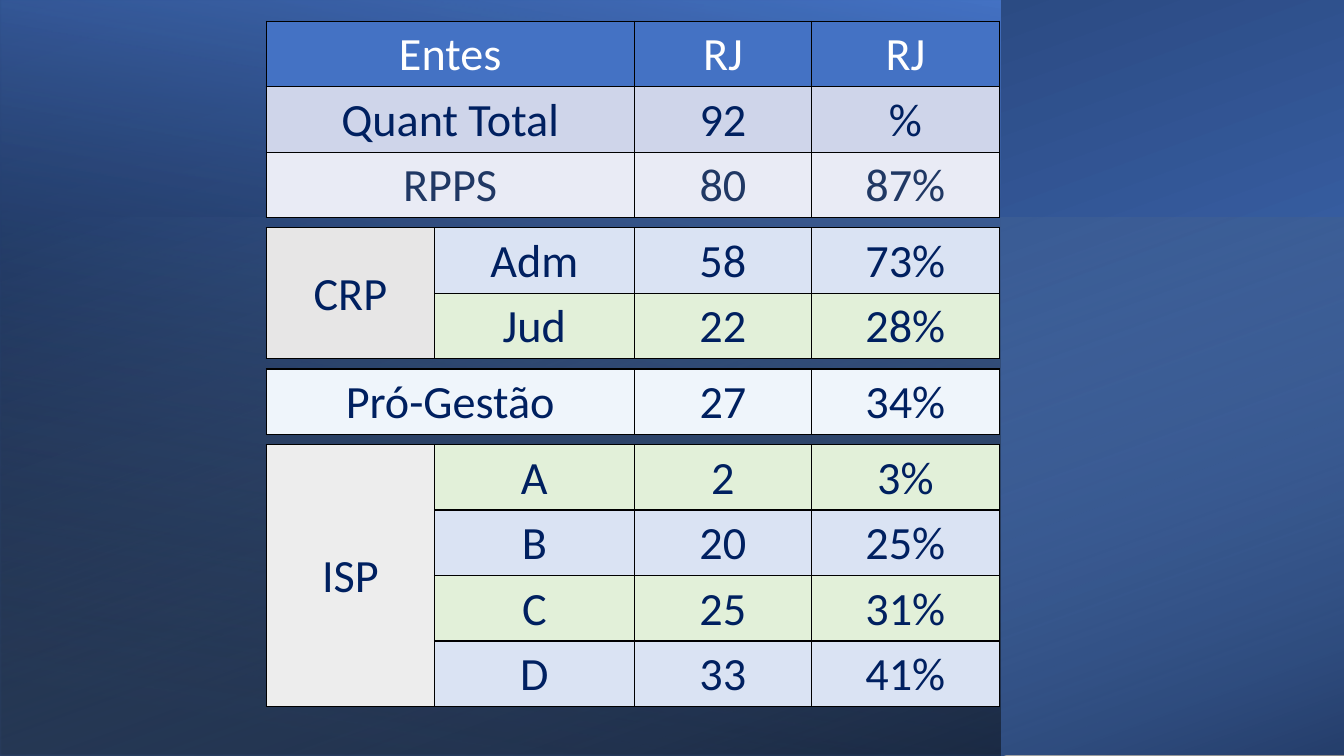
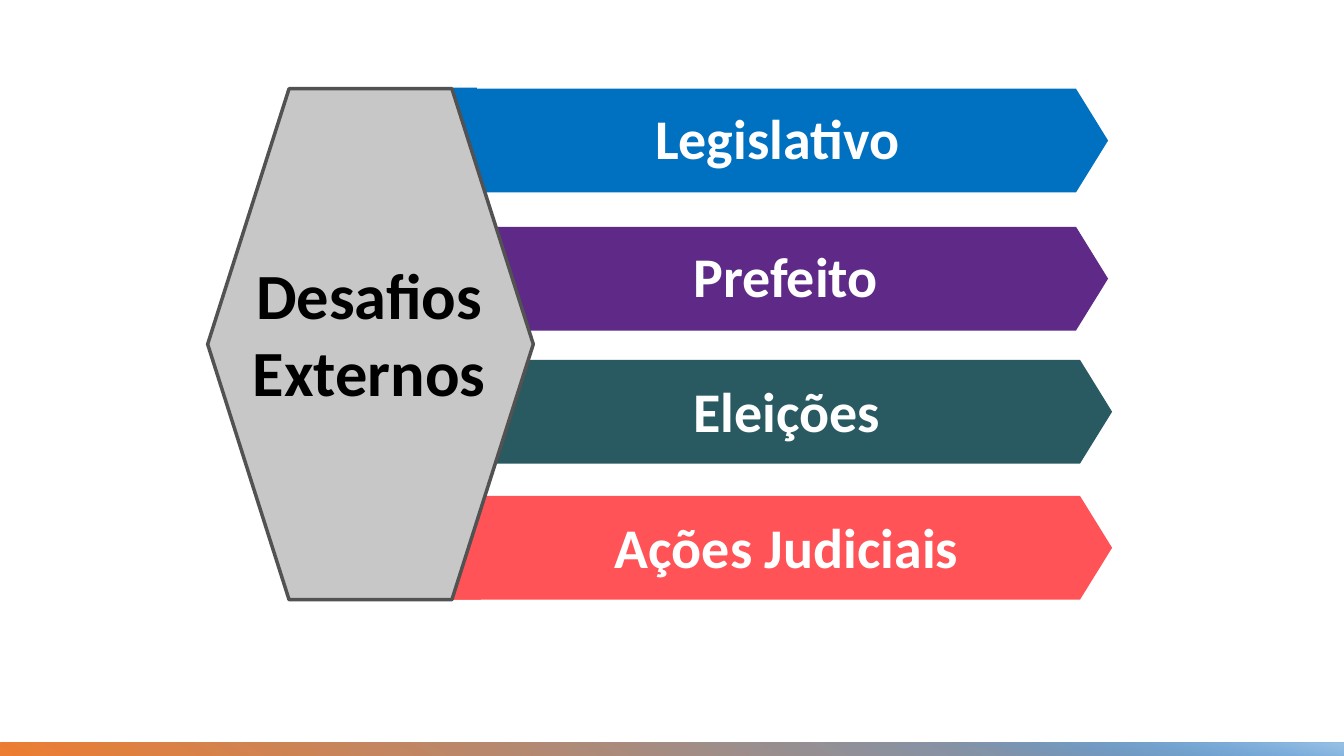
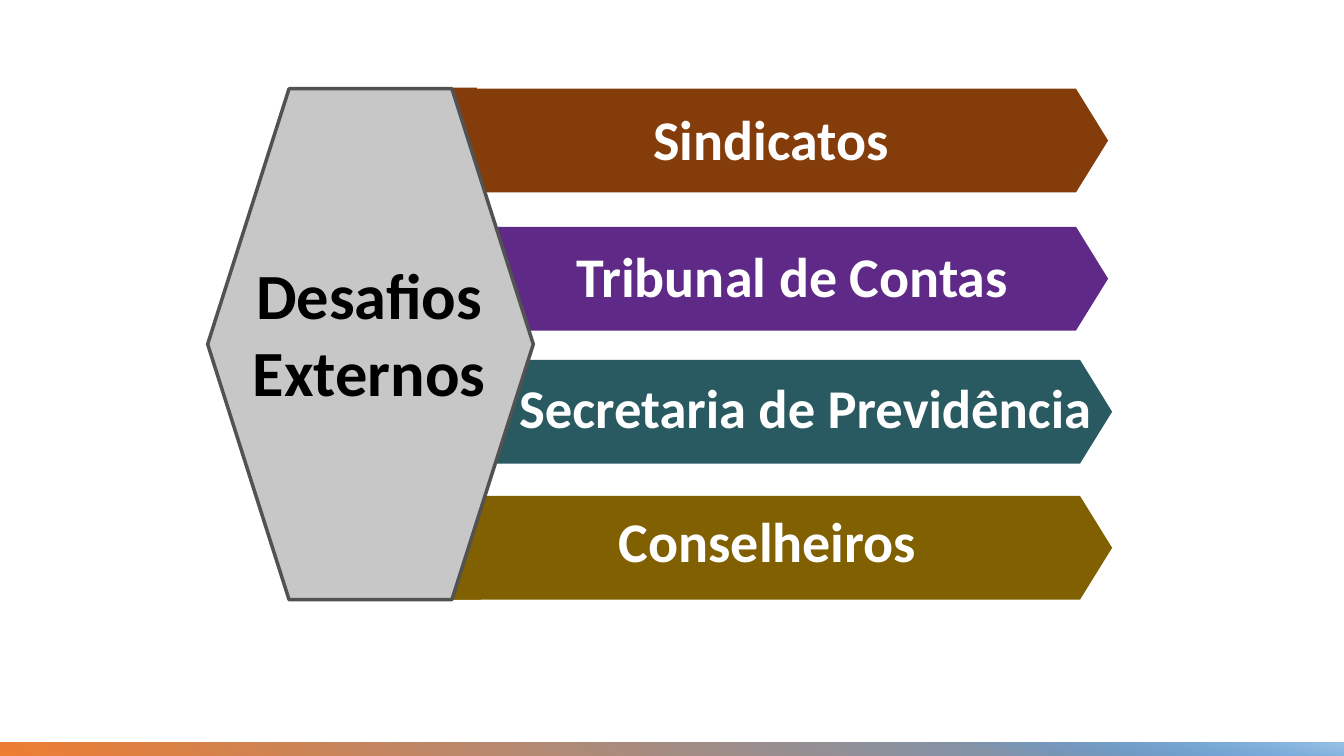
from lxml.etree import SubElement
from pptx import Presentation
from pptx.dml.color import RGBColor
from pptx.enum.shapes import MSO_SHAPE
from pptx.enum.text import MSO_ANCHOR, MSO_AUTO_SIZE, PP_ALIGN
from pptx.oxml.ns import qn
from pptx.util import Inches, Pt

FONT = "Calibri"
COLORS = {
    "white": "FFFFFF", "black": "000000", "blue": "4472C4", "navy": "203864",
    "ink": "002060", "sky": "9DC3E6", "total": "CFD5EA", "rpps": "E9EBF5",
    "crp": "E7E6E6", "isp": "EDEDED", "pale blue": "DAE3F3", "pale green": "E2F0D9",
    "ice": "EFF5FB", "orange": "ED7D31", "light blue": "5B9BD5", "cobalt": "0070C0",
    "purple": "5F2987", "teal": "295A61", "coral": "FF5357", "brown": "843C0B",
    "olive": "806000", "gray": "C7C7C7", "dark gray": "525252",
}

# Gradient rectangles: box, rotation, flipped, angle, stops (position, colour, opacity)
BACKDROP = [
    ((2.92, -2.92, 7.5, 13.33), 270, True, 200, [(8, "blue", 100), (100, "navy", 100)]),
    ((0, 0, 9.92, 7.5), 180, True, 80, [(8, "black", 52), (100, "blue", 100)]),
    ((3.99, -1.84, 5.35, 13.34), 270, True, 20, [(0, "sky", 0), (100, "black", 46)]),
]
FOOTER = [
    ((6.6, 0.77, 0.13, 13.33), 270, False, 30,
     [(0, "orange", 100), (100, "light blue", 100)]),
    ((11.2, 5.37, 0.13, 4.13), 270, False, 10,
     [(19, "light blue", 0), (100, "sky", 100)]),
]

# Tables: group label with its fill, or None; rows of (cells, fill, text colour)
TABLES = [
    (None, [(("Entes", "RJ", "RJ"), "blue", "white"),
            (("Quant Total", "92", "%"), "total", "ink"),
            (("RPPS", "80", "87%"), "rpps", "navy")]),
    (("CRP", "crp"), [(("Adm", "58", "73%"), "pale blue", "ink"),
                      (("Jud", "22", "28%"), "pale green", "ink")]),
    (None, [(("Pró-Gestão", "27", "34%"), "ice", "ink")]),
    (("ISP", "isp"), [(("A", "2", "3%"), "pale green", "ink"),
                      (("B", "20", "25%"), "pale blue", "ink"),
                      (("C", "25", "31%"), "pale green", "ink"),
                      (("D", "33", "41%"), "pale blue", "ink")]),
]
TABLE_LEFT, TABLE_TOP, TABLE_GAP, ROW_H = 2.64, 0.21, 0.1, 0.65
GROUP_W, LABEL_W, VALUE_WIDTHS = 1.67, 1.98, [1.76, 1.86]

# Challenges: label, band colour, label left, top and width, label size
CHALLENGES = [
    [("Legislativo", "cobalt", 6.4, 0.98, 2.68, 40),
     ("Prefeito", "purple", 6.78, 2.35, 2.26, 40),
     ("Eleições", "teal", 6.78, 3.69, 2.12, 40),
     ("Ações Judiciais", "coral", 6, 5.04, 3.62, 40)],
    [("Sindicatos", "brown", 6.38, 0.99, 2.56, 40),
     ("Tribunal de Contas", "purple", 5.62, 2.35, 4.6, 40),
     ("Secretaria de Previdência", "teal", 5.05, 3.66, 5.89, 39),
     ("Conselheiros", "olive", 6.04, 4.98, 3.23, 40)],
]
BAND_CORNERS = [(4.14, 0.88), (4.14, 2.25), (4.18, 3.57), (4.18, 4.92)]


def rgb(name):
    return RGBColor.from_string(COLORS[name])


def add_shape(s, kind, box, fill=None):
    sp = s.shapes.add_shape(kind, *map(Inches, box))
    sp.shadow.inherit = False
    sp.line.fill.background()
    if fill:
        sp.fill.solid()
        sp.fill.fore_color.rgb = rgb(fill)
    return sp


def add_gradient(s, box, rotation, flipped, angle, stops):
    sp = add_shape(s, MSO_SHAPE.RECTANGLE, box)
    sp.rotation = rotation
    if flipped:
        sp._element.spPr.xfrm.set("flipH", "1")
    sp.fill.gradient()
    sp.fill.gradient_angle = 360 - angle
    for stop, (position, color, _) in zip(sp.fill.gradient_stops, stops):
        stop.position = position / 100
        stop.color.rgb = rgb(color)
    for clr, (_, _, opacity) in zip(sp._element.spPr.iter(qn("a:srgbClr")), stops):
        if opacity < 100:
            SubElement(clr, qn("a:alpha")).set("val", str(opacity * 1000))


def write(p, text, size, color, bold=False):
    r = p.add_run()
    r.text = text
    for key, value in {"name": FONT, "size": Pt(size), "bold": bold}.items():
        setattr(r.font, key, value)
    r.font.color.rgb = rgb(color)


def add_label(s, box, lines, size, color, align=PP_ALIGN.LEFT):
    tf = s.shapes.add_textbox(*map(Inches, box)).text_frame
    tf.word_wrap = False
    tf.auto_size = MSO_AUTO_SIZE.SHAPE_TO_FIT_TEXT
    for i, line in enumerate(lines):
        p = tf.add_paragraph() if i else tf.paragraphs[0]
        p.alignment = align
        write(p, line, size, color, bold=True)


def format_cell(cell, fill):
    """Set borders, margins and fill; borders come first in the cell's XML."""
    tcPr = cell._tc.get_or_add_tcPr()
    for side in ("lnL", "lnR", "lnT", "lnB"):
        ln = SubElement(tcPr, qn(f"a:{side}"), w=str(Pt(1)))
        line_fill = SubElement(ln, qn("a:solidFill"))
        SubElement(line_fill, qn("a:srgbClr"), val=COLORS["black"])
    cell.fill.solid()
    cell.fill.fore_color.rgb = rgb(fill)
    cell.vertical_anchor = MSO_ANCHOR.MIDDLE
    cell.margin_left = cell.margin_right = cell.margin_top = Inches(0.02)
    cell.margin_bottom = 0


def add_table(s, top, group, rows):
    labels = [GROUP_W, LABEL_W] if group else [GROUP_W + LABEL_W]
    widths = labels + VALUE_WIDTHS
    height = ROW_H * len(rows)
    box = (TABLE_LEFT, top, sum(widths), height)
    table = s.shapes.add_table(len(rows), len(widths), *map(Inches, box)).table
    table.first_row = table.horz_banding = False
    for column, width in zip(table.columns, widths):
        column.width = Inches(width)
    for i, (texts, fill, color) in enumerate(rows):
        table.rows[i].height = Inches(ROW_H)
        entries = [(text, fill) for text in texts]
        if group:
            entries.insert(0, (group[0] if i == 0 else "", group[1]))
        for j, (text, cell_fill) in enumerate(entries):
            cell = table.cell(i, j)
            format_cell(cell, cell_fill)
            if text:
                p = cell.text_frame.paragraphs[0]
                p.alignment = PP_ALIGN.CENTER
                write(p, text, 33, color)
    if group:
        table.cell(0, 0).merge(table.cell(len(rows) - 1, 0))
    return top + height + TABLE_GAP


def build_indicators(s):
    for gradient in BACKDROP:
        add_gradient(s, *gradient)
    top = TABLE_TOP
    for group, rows in TABLES:
        top = add_table(s, top, group, rows)


def build_challenges(s, challenges):
    for gradient in FOOTER:
        add_gradient(s, *gradient)
    for (left, top), (text, color, x, y, width, size) in zip(BAND_CORNERS, challenges):
        band = add_shape(s, MSO_SHAPE.HEXAGON, (left, top, 6.85, 1.03), color)
        band.adjustments[0] = 0.309
        add_shape(s, MSO_SHAPE.RECTANGLE, (left - 0.04, top - 0.01, 0.63, 1.04), color)
        add_label(s, (x, y, width, 0.77), [text], size, "white")
    hexagon = add_shape(s, MSO_SHAPE.HEXAGON, (2.06, 0.88, 3.23, 5.07), "gray")
    hexagon.line.color.rgb = rgb("dark gray")
    hexagon.line.width = Pt(2.5)
    add_label(s, (2.4, 2.48, 2.52, 1.65), ["Desafios", "Externos"], 46, "black",
              PP_ALIGN.CENTER)


def main():
    prs = Presentation()
    prs.slide_width, prs.slide_height = Inches(13.33), Inches(7.5)
    blank = prs.slide_layouts[6]
    build_indicators(prs.slides.add_slide(blank))
    for challenges in CHALLENGES:
        build_challenges(prs.slides.add_slide(blank), challenges)
    prs.save("out.pptx")


if __name__ == "__main__":
    main()
